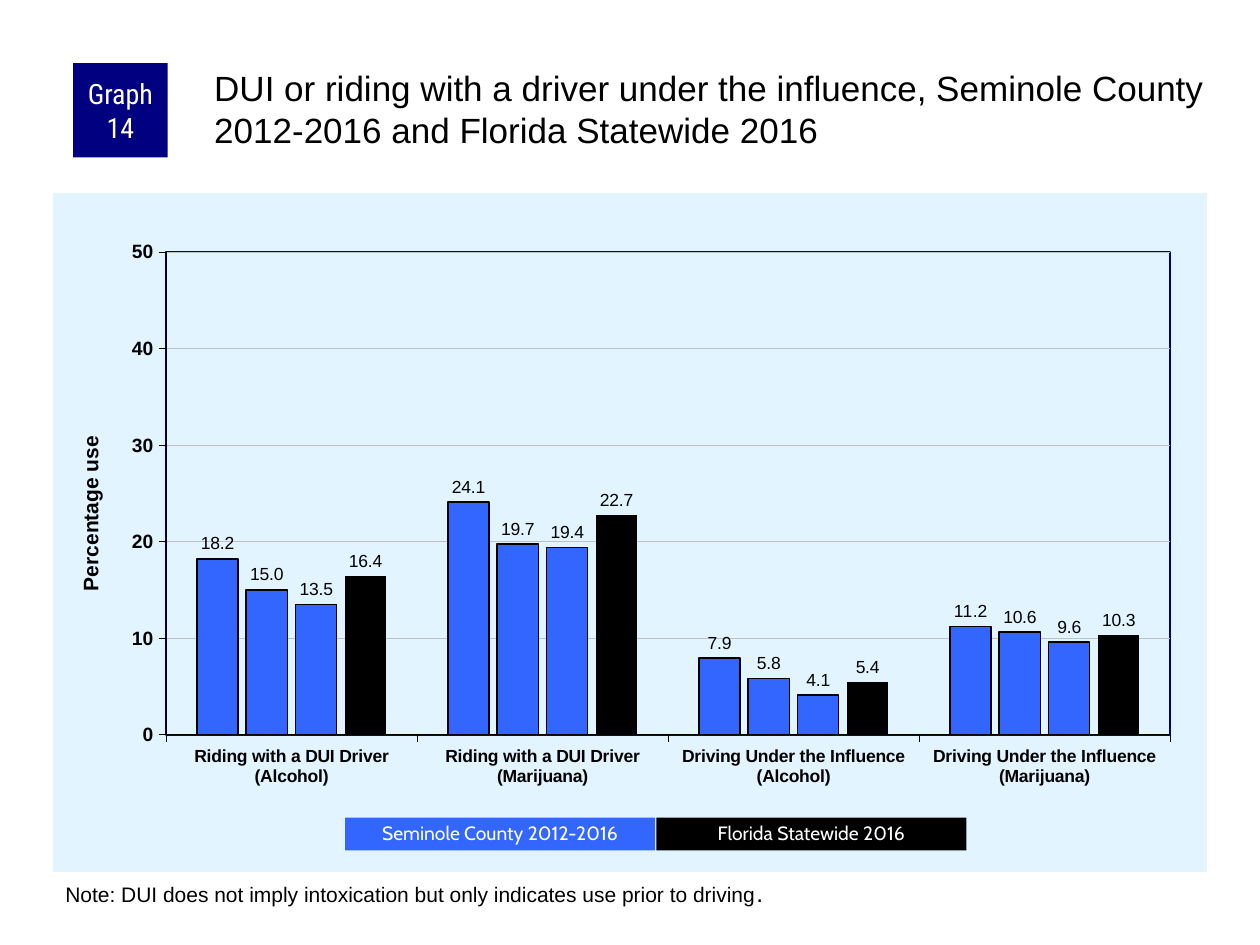
from lxml.etree import SubElement, fromstring
from pptx import Presentation
from pptx.chart.data import CategoryChartData
from pptx.dml.color import RGBColor
from pptx.enum.chart import XL_CHART_TYPE, XL_LABEL_POSITION, XL_TICK_MARK
from pptx.enum.shapes import MSO_SHAPE
from pptx.enum.text import MSO_ANCHOR, PP_ALIGN
from pptx.oxml.ns import nsdecls, qn
from pptx.util import Inches, Pt

CATEGORIES = [
    "Riding with a DUI Driver (Alcohol)",
    "Riding with a DUI Driver (Marijuana)",
    "Driving Under the Influence (Alcohol)",
    "Driving Under the Influence (Marijuana)",
]
SERIES = [
    ("Series 1", (18.2, 24.1, 7.9, 11.2), "3366FF", 1),
    ("Series 2", (15, 19.7, 5.8, 10.6), "3366FF", 1),
    ("Series 3", (13.5, 19.4, 4.1, 9.6), "3366FF", 0.75),
    ("Series 4", (16.4, 22.7, 5.4, 10.3), "000000", None),
]
PLOT = {"x": 0.098, "y": 0.087, "w": 0.87, "h": 0.711}


def set_values(target, values):
    """Set each named attribute of the target."""
    for name, value in values.items():
        setattr(target, name, value)


def paint(color_format, color):
    """Give a font, fill or line colour from a hex string."""
    color_format.rgb = RGBColor.from_string(color)


def fill_solid(fill, color):
    """Fill with one colour."""
    fill.solid()
    paint(fill.fore_color, color)


def style_line(line, color, width):
    """Set line colour and width in points."""
    paint(line.color, color)
    line.width = Pt(width)


def style_font(font, size, color="000000", name="Arial", bold=False):
    """Set the look of a font."""
    set_values(font, {"size": Pt(size), "name": name, "bold": bold})
    paint(font.color, color)


def write_text(box, spans, margins, format_values, **font):
    """Write one paragraph of (text, size) spans."""
    frame = box.text_frame
    frame.word_wrap = True
    sides = ("margin_left", "margin_top", "margin_right", "margin_bottom")
    set_values(frame, dict(zip(sides, map(Inches, margins))))
    para = frame.paragraphs[0]
    set_values(para, format_values)
    for text, size in spans:
        span = para.add_run()
        span.text = text
        style_font(span.font, size, **font)


def add_text(page, place, spans, margins):
    """Add a plain text box."""
    box = page.shapes.add_textbox(*map(Inches, place))
    write_text(box, spans, margins, {})


def add_label(page, place, color, text, size, name, margins, spacing):
    """Add a filled rectangle with centred white text."""
    box = page.shapes.add_shape(MSO_SHAPE.RECTANGLE, *map(Inches, place))
    box.shadow.inherit = False
    fill_solid(box.fill, color)
    box.line.fill.background()
    box.text_frame.vertical_anchor = MSO_ANCHOR.MIDDLE
    values = {"alignment": PP_ALIGN.CENTER, "line_spacing": spacing}
    write_text(box, [(text, size)], margins, values, color="FFFFFF", name=name)


def area_format(fill, line):
    """Return chart shape properties built from two drawing fragments."""
    return fromstring(
        f'<c:spPr {nsdecls("c", "a")}>{fill}{line}</c:spPr>'
    )


def format_areas(chart):
    """Place the plot area and colour the chart background."""
    space = chart._chartSpace
    color = '<a:solidFill><a:srgbClr val="{}"/></a:solidFill>'
    space.find(qn("c:chart")).addnext(
        area_format(color.format("E1F4FF"), "<a:ln><a:noFill/></a:ln>")
    )
    plot_area = space.find(".//" + qn("c:plotArea"))
    for old in plot_area.findall(qn("c:layout")):
        plot_area.remove(old)
    layout = fromstring(f'<c:layout {nsdecls("c")}><c:manualLayout/></c:layout>')
    entries = {"layoutTarget": "inner", "xMode": "edge", "yMode": "edge", **PLOT}
    for name, value in entries.items():
        SubElement(layout[0], qn(f"c:{name}")).set("val", str(value))
    plot_area.insert(0, layout)
    border = f'<a:ln w="12700">{color.format("000080")}</a:ln>'
    plot_area.append(area_format("<a:noFill/>", border))


def format_axis(axis, size):
    """Style the line, ticks and labels of an axis."""
    set_values(axis, {"major_tick_mark": XL_TICK_MARK.OUTSIDE,
                      "minor_tick_mark": XL_TICK_MARK.NONE})
    style_line(axis.format.line, "000000", 0.25)
    style_font(axis.tick_labels.font, size, bold=True)


def format_value_axis(axis):
    """Set the scale, gridlines and title of the value axis."""
    format_axis(axis, 11)
    set_values(axis, {"minimum_scale": 0, "maximum_scale": 50,
                      "major_unit": 10, "has_major_gridlines": True})
    set_values(axis.tick_labels, {"number_format": "0",
                                  "number_format_is_linked": False})
    style_line(axis.major_gridlines.format.line, "C0C0C0", 0.25)
    span = axis.axis_title.text_frame.paragraphs[0].add_run()
    span.text = "Percentage use"
    style_font(span.font, 12, bold=True)


def format_series(series, color, width):
    """Colour the bars of a series and show their values."""
    series.invert_if_negative = False
    fill_solid(series.format.fill, color)
    if width:
        style_line(series.format.line, "000000", width)
    else:
        series.format.line.fill.background()
    labels = series.data_labels
    set_values(labels, {"show_value": True, "number_format": "0.0",
                        "number_format_is_linked": False,
                        "position": XL_LABEL_POSITION.OUTSIDE_END})
    style_font(labels.font, 10)


def add_usage_chart(page, place):
    """Add the clustered column chart."""
    data = CategoryChartData()
    data.categories = CATEGORIES
    for name, values, _, _ in SERIES:
        data.add_series(name, values)
    chart = page.shapes.add_chart(
        XL_CHART_TYPE.COLUMN_CLUSTERED, *map(Inches, place), data
    ).chart
    set_values(chart, {"has_legend": False, "has_title": False})
    style_font(chart.font, 11.5)
    plot = chart.plots[0]
    set_values(plot, {"gap_width": 150, "overlap": -20,
                      "vary_by_categories": False})
    for series, (_, _, color, width) in zip(plot.series, SERIES):
        format_series(series, color, width)
    format_axis(chart.category_axis, 10)
    format_value_axis(chart.value_axis)
    format_areas(chart)


def main():
    """Build the slide and save it."""
    deck = Presentation()
    set_values(deck, {"slide_width": Inches(10), "slide_height": Inches(7.5)})
    page = deck.slides.add_slide(deck.slide_layouts[6])
    add_usage_chart(page, (0.42, 1.53, 9.16, 5.39))
    add_label(page, (0.58, 0.5, 0.75, 0.75), "000080", "Graph 14", 16,
              "Roboto Condensed", (0.05, 0, 0.05, 0), None)
    title = ("DUI or riding with a driver under the influence, "
             "Seminole County 2012-2016 and Florida Statewide 2016")
    add_text(page, (1.67, 0.5, 7.92, 0.83), [(title, 20)], (0.03, 0.03, 0, 0))
    note = ("Note: DUI does not imply intoxication but only indicates "
            "use prior to driving")
    add_text(page, (0.42, 6.92, 9.17, 0.34), [(note, 12), (".", 14)],
             (0.1, 0.05, 0.1, 0.05))
    legend = [("Seminole County 2012-2016", "3366FF"),
              ("Florida Statewide 2016", "000000")]
    for index, (text, color) in enumerate(legend):
        add_label(page, (2.74 + index * 2.47, 6.49, 2.46, 0.26), color, text,
                  11, "Cabin", (0.1, 0.05, 0.1, 0.05), 0.9)
    deck.save("out.pptx")


if __name__ == "__main__":
    main()
